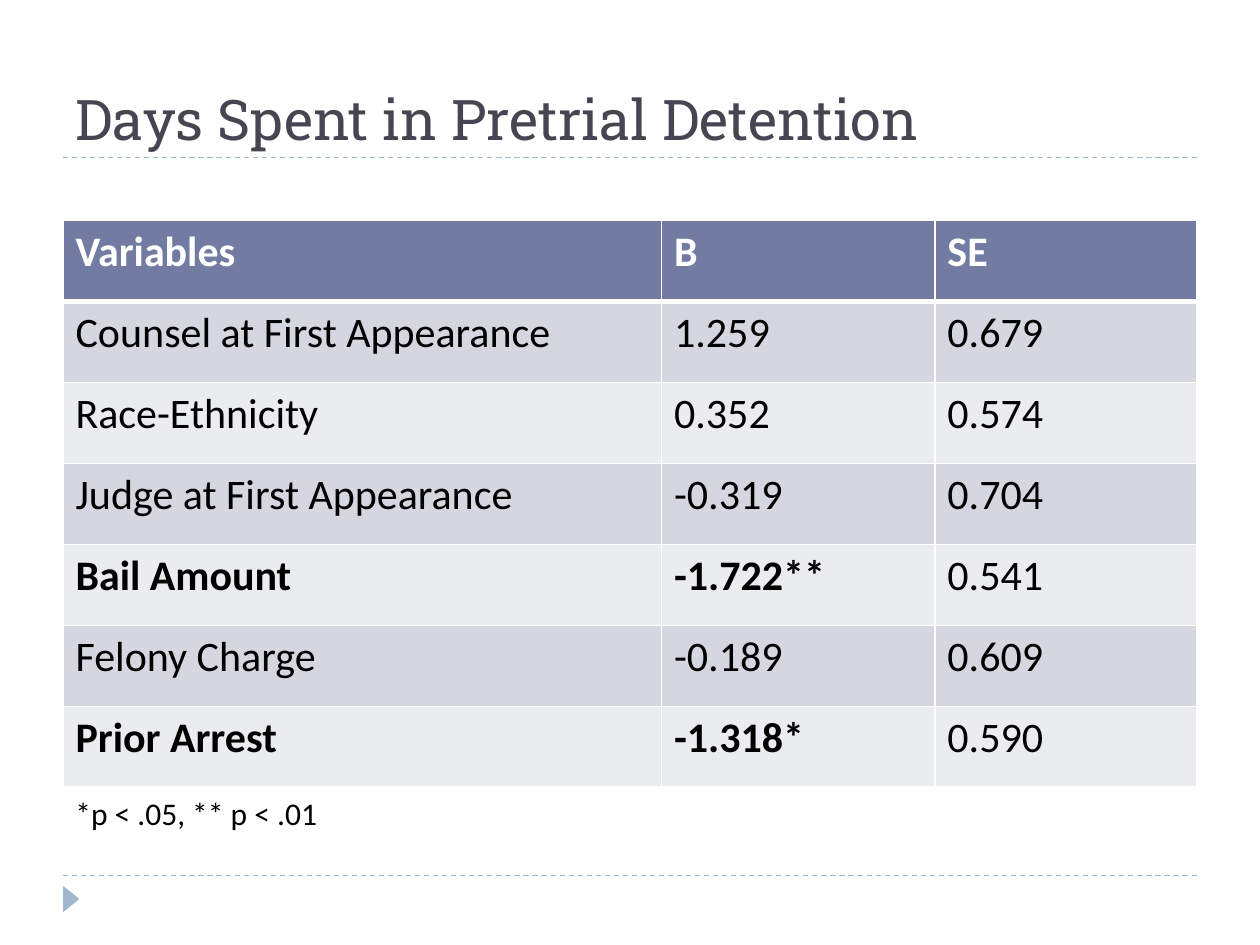
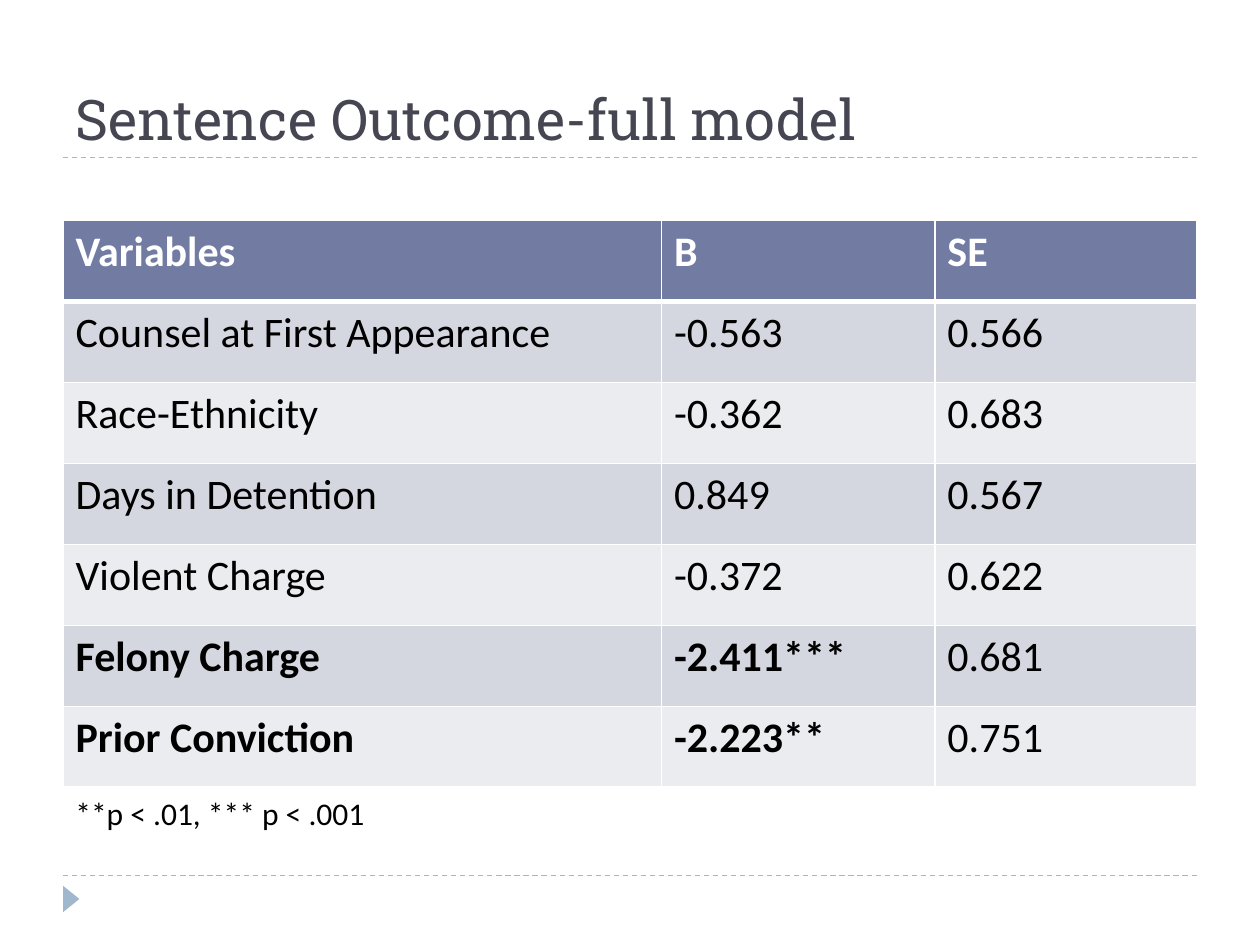
import collections

import lxml.etree
import pptx
import pptx.dml.color
import pptx.enum.dml
import pptx.enum.shapes
import pptx.enum.text
import pptx.oxml.ns
import pptx.util

RGBColor = pptx.dml.color.RGBColor
WHITE = RGBColor(0xFF, 0xFF, 0xFF)
BLACK = RGBColor(0x00, 0x00, 0x00)
TITLE_INK = RGBColor(0x46, 0x46, 0x53)
ACCENT = RGBColor(0x9F, 0xB8, 0xCD)
HEADER_FILL = RGBColor(0x72, 0x7C, 0xA3)
BAND_FILLS = (RGBColor(0xD5, 0xD7, 0xE0), RGBColor(0xEB, 0xEC, 0xF0))

TITLE_FONT = "Roboto Slab"
BODY_FONT = "Calibri"

# The slide is a grid of 20 columns by 15 rows of square units
SLIDE_WIDTH = pptx.util.Inches(10)
SLIDE_HEIGHT = pptx.util.Inches(7.5)
UNIT = SLIDE_WIDTH // 20

Box = collections.namedtuple("Box", "left top width height")
TITLE_BOX = Box(1, 0.34, 18, 2.16)
TABLE_BOX = Box(1, 3.5, 18, 9)
NOTE_BOX = Box(1, 12.5, 18, 0.8)
FOOTER_BOX = Box(1, 13.9, 18, 0.6)

HEADINGS = ("Variables", "B", "SE")
COLUMN_SHARES = (4.75 / 9, 2.17 / 9, 2.08 / 9)

DETENTION_ROWS = (
    ("Counsel at First Appearance", "1.259", "0.679"),
    ("Race-Ethnicity", "0.352", "0.574"),
    ("Judge at First Appearance", "-0.319", "0.704"),
    ("Bail Amount", "-1.722**", "0.541"),
    ("Felony Charge", "-0.189", "0.609"),
    ("Prior Arrest", "-1.318*", "0.590"),
)
SENTENCE_ROWS = (
    ("Counsel at First Appearance", "-0.563", "0.566"),
    ("Race-Ethnicity", "-0.362", "0.683"),
    ("Days in Detention", "0.849", "0.567"),
    ("Violent Charge", "-0.372", "0.622"),
    ("Felony Charge", "-2.411***", "0.681"),
    ("Prior Conviction", "-2.223**", "0.751"),
)


def units(*lengths):
    return [round(length * UNIT) for length in lengths]


def add_span(para, text, font, size, color, bold=False):
    span = para.add_run()
    span.text = text
    span.font.name = font
    span.font.size = pptx.util.Pt(size)
    span.font.color.rgb = color
    span.font.bold = bold


def add_text(page, box, text, font, size, color, anchor):
    frame = page.shapes.add_textbox(*units(*box)).text_frame
    frame.word_wrap = True
    frame.vertical_anchor = anchor
    add_span(frame.paragraphs[0], text, font, size, color)


def add_rule(page, left, top, width):
    rule = page.shapes.add_connector(
        pptx.enum.shapes.MSO_CONNECTOR.STRAIGHT, *units(left, top, left + width, top))
    rule.line.color.rgb = ACCENT
    rule.line.width = pptx.util.Pt(0.75)
    rule.line.dash_style = pptx.enum.dml.MSO_LINE.DASH
    properties = rule._element.spPr
    lxml.etree.SubElement(properties, pptx.oxml.ns.qn("a:effectLst"))


def add_title(page, box, text):
    add_rule(page, box.left, box.top + box.height, box.width)
    add_text(page, box, text, TITLE_FONT, 32, TITLE_INK,
             pptx.enum.text.MSO_ANCHOR.BOTTOM)


def add_footer(page, box):
    add_rule(page, box.left, box.top, box.width)
    # Triangle turned to point right
    marker = page.shapes.add_shape(
        pptx.enum.shapes.MSO_SHAPE.ISOSCELES_TRIANGLE,
        *units(box.left - 0.08, box.top + 0.24, 0.42, 0.26))
    marker.rotation = 90
    marker.shadow.inherit = False
    marker.fill.solid()
    marker.fill.fore_color.rgb = ACCENT
    marker.line.fill.background()


def set_borders(cell, top, bottom):
    properties = cell._tc.get_or_add_tcPr()
    for side, points in (("L", 1), ("R", 1), ("T", top), ("B", bottom)):
        border = lxml.etree.SubElement(
            properties, pptx.oxml.ns.qn(f"a:ln{side}"), w=str(pptx.util.Pt(points)))
        fill = lxml.etree.SubElement(border, pptx.oxml.ns.qn("a:solidFill"))
        lxml.etree.SubElement(fill, pptx.oxml.ns.qn("a:srgbClr"), val=str(WHITE))


def add_results_table(page, box, results):
    rows = (HEADINGS, *results)
    table = page.shapes.add_table(len(rows), len(HEADINGS), *units(*box)).table
    table.first_row = False
    table.horz_banding = False
    for column, share in zip(table.columns, COLUMN_SHARES):
        column.width = units(box.width * share)[0]
    for row_index, values in enumerate(rows):
        table.rows[row_index].height = units(box.height / len(rows))[0]
        header = row_index == 0
        significant = values[1].endswith("*")
        for column_index, value in enumerate(values):
            cell = table.cell(row_index, column_index)
            set_borders(cell, top=3 if row_index == 1 else 1, bottom=3 if header else 1)
            cell.fill.solid()
            cell.fill.fore_color.rgb = HEADER_FILL if header else BAND_FILLS[(row_index - 1) % 2]
            add_span(cell.text_frame.paragraphs[0], value, BODY_FONT, 24,
                     WHITE if header else BLACK,
                     bold=header or (significant and column_index < 2))


def add_results_page(deck, title, results, note):
    page = deck.slides.add_slide(deck.slide_layouts[6])
    add_footer(page, FOOTER_BOX)
    add_title(page, TITLE_BOX, title)
    add_results_table(page, TABLE_BOX, results)
    add_text(page, NOTE_BOX, note, BODY_FONT, 18, BLACK,
             pptx.enum.text.MSO_ANCHOR.TOP)


def main():
    deck = pptx.Presentation()
    deck.slide_width = SLIDE_WIDTH
    deck.slide_height = SLIDE_HEIGHT
    add_results_page(deck, "Days Spent in Pretrial Detention", DETENTION_ROWS,
                     "*p < .05, ** p < .01")
    add_results_page(deck, "Sentence Outcome-full model", SENTENCE_ROWS,
                     "**p < .01, *** p < .001")
    deck.save("out.pptx")


if __name__ == "__main__":
    main()
